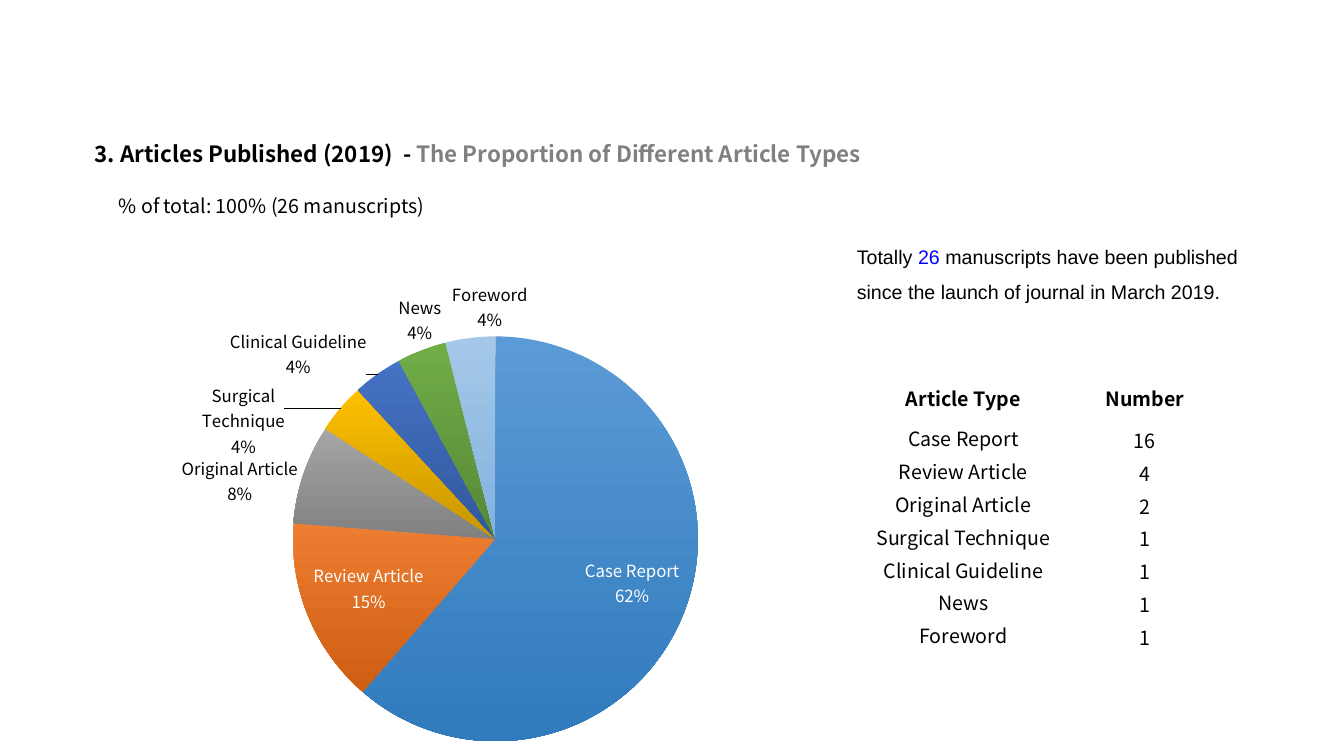
from dataclasses import dataclass

from lxml.etree import SubElement
from pptx import Presentation
from pptx.chart.data import CategoryChartData
from pptx.dml.color import RGBColor
from pptx.enum.chart import XL_CHART_TYPE as ChartType, XL_LABEL_POSITION as LabelPos
from pptx.enum.text import MSO_ANCHOR as Anchor, PP_ALIGN as Align
from pptx.oxml import parse_xml
from pptx.oxml.ns import nsdecls, qn
from pptx.slide import Slide
from pptx.text.text import TextFrame
from pptx.util import Inches, Pt

BLACK = RGBColor(0, 0, 0)
WHITE = RGBColor(255, 255, 255)
GRAY = RGBColor(0x80, 0x80, 0x80)
LINK_BLUE = RGBColor(0, 0, 255)
SKY = RGBColor(0x5B, 0x9B, 0xD5)
ORANGE = RGBColor(0xED, 0x7D, 0x31)
SILVER = RGBColor(0xA5, 0xA5, 0xA5)
GOLD = RGBColor(0xFF, 0xC0, 0x00)
ROYAL = RGBColor(0x44, 0x72, 0xC4)
GREEN = RGBColor(0x70, 0xAD, 0x47)
SANS = "Noto Sans CJK SC"


@dataclass(frozen=True)
class ArticleType:
    name: str
    number: int
    percent: int
    color: RGBColor
    tint: float = 0
    label_inside: bool = False
    label_shift: tuple[float, float] | None = None


ARTICLE_TYPES = [
    ArticleType("Case Report", 16, 62, SKY, label_inside=True),
    ArticleType("Review Article", 4, 15, ORANGE, label_inside=True),
    ArticleType("Original Article", 2, 8, SILVER, label_shift=(0, 0.07)),
    ArticleType("Surgical Technique", 1, 4, GOLD, label_shift=(-0.07, 0.11)),
    ArticleType("Clinical Guideline", 1, 4, ROYAL, label_shift=(-0.01, 0.02)),
    ArticleType("News", 1, 4, GREEN, label_shift=(0.03, 0)),
    ArticleType("Foreword", 1, 4, SKY, tint=0.45, label_shift=(0.08, 0)),
]


def write(frame: TextFrame, *runs: tuple[str, RGBColor], size: float = 14,
          font: str = SANS, bold: bool = False, align: Align = Align.LEFT,
          spacing: float = 1.0) -> None:
    paragraph = frame.paragraphs[0]
    paragraph.alignment = align
    paragraph.line_spacing = spacing
    for text, color in runs:
        run = paragraph.add_run()
        run.text = text
        run.font.name, run.font.size, run.font.bold = font, Pt(size), bold
        run.font.color.rgb = color


def add_text(slide: Slide, left: float, top: float, width: float, height: float,
             *runs: tuple[str, RGBColor], **text_format) -> None:
    frame = slide.shapes.add_textbox(
        Inches(left), Inches(top), Inches(width), Inches(height)).text_frame
    frame.word_wrap = True
    write(frame, *runs, **text_format)


def manual_layout(**values: float | str):
    """Return a c:layout element holding the given manual settings."""
    layout = parse_xml(f"<c:layout {nsdecls('c')}><c:manualLayout/></c:layout>")
    for tag, value in values.items():
        SubElement(layout[0], qn(f"c:{tag}")).set("val", str(value))
    return layout


def style_slice(point, article: ArticleType) -> None:
    fill = point.format.fill
    fill.gradient()
    fill.gradient_angle = 270
    for stop, shade in zip(fill.gradient_stops, (0, -0.22)):
        stop.color.rgb = article.color
        stop.color.brightness = article.tint + shade
    point.format.line.fill.background()

    label = point.data_label
    label.font.name, label.font.size = SANS, Pt(12)
    label.font.color.rgb = WHITE if article.label_inside else BLACK
    label.position = LabelPos.INSIDE_END if article.label_inside else LabelPos.OUTSIDE_END


def add_share_pie(slide: Slide) -> None:
    data = CategoryChartData(number_format='0"%"')
    data.categories = [article.name for article in ARTICLE_TYPES]
    data.add_series("Series 1", [article.percent for article in ARTICLE_TYPES])
    chart = slide.shapes.add_chart(ChartType.PIE, Inches(0.72), Inches(2.66),
                                   Inches(7.23), Inches(4.84), data).chart
    chart.has_legend = chart.has_title = False
    chart.font.name, chart.font.size = SANS, Pt(10)
    chart.font.color.rgb = BLACK
    plot = chart.plots[0]
    plot.vary_by_categories = True
    series = plot.series[0]
    for point, article in zip(series.points, ARTICLE_TYPES):
        style_slice(point, article)

    labels = series.data_labels
    labels.show_category_name = labels.show_value = True
    for label, article in zip(series._element.iter(qn("c:dLbl")), ARTICLE_TYPES):
        label.find(qn("c:showCatName")).set("val", "1")
        label.find(qn("c:showPercent")).set("val", "0")
        SubElement(label, qn("c:separator")).text = "\n"
        if article.label_shift:
            x, y = article.label_shift
            label.insert(1, manual_layout(x=x, y=y))

    plot_area = chart._chartSpace.chart.plotArea
    for layout in plot_area.findall(qn("c:layout")):
        plot_area.remove(layout)
    plot_area.insert(0, manual_layout(layoutTarget="inner", xMode="edge", yMode="edge",
                                      x=0.3, y=0.14, w=0.56, h=0.83))


def add_count_table(slide: Slide) -> None:
    rows = [("Article Type", "Number")]
    rows += [(article.name, str(article.number)) for article in ARTICLE_TYPES]
    height, header_height = 2.75, 0.47
    body_height = (height - header_height) / len(ARTICLE_TYPES)
    table = slide.shapes.add_table(len(rows), 2, Inches(8.4), Inches(3.71),
                                   Inches(3.6), Inches(height)).table
    table.first_row = table.horz_banding = False
    for column, width in zip(table.columns, (2.31, 1.29)):
        column.width = Inches(width)
    for r, texts in enumerate(rows):
        is_header = r == 0
        table.rows[r].height = Inches(header_height if is_header else body_height)
        for c, text in enumerate(texts):
            cell = table.cell(r, c)
            cell.fill.background()
            cell.margin_left = cell.margin_right = cell.margin_top = Inches(0.01)
            cell.margin_bottom = 0
            cell.vertical_anchor = Anchor.MIDDLE if is_header or c == 0 else Anchor.BOTTOM
            write(cell.text_frame, (text, BLACK), bold=is_header, align=Align.CENTER)


def main() -> None:
    deck = Presentation()
    deck.slide_width, deck.slide_height = Inches(13.33), Inches(7.5)
    slide = deck.slides.add_slide(deck.slide_layouts[6])
    add_share_pie(slide)
    add_text(slide, 0.84, 1.34, 8.08, 0.37,
             ("3. Articles Published (2019)  - ", BLACK),
             ("The Proportion of Different Article Types", GRAY), size=16, bold=True)
    add_text(slide, 1.08, 1.87, 5.26, 0.34, ("% of total: 100% (26 manuscripts)", BLACK))
    add_text(slide, 8.4, 2.26, 4.17, 0.81, ("Totally ", BLACK), ("26 ", LINK_BLUE),
             ("manuscripts have been published since the launch of journal in March 2019.",
              BLACK), font="Arial", spacing=1.5)
    add_count_table(slide)
    deck.save("out.pptx")


if __name__ == "__main__":
    main()
